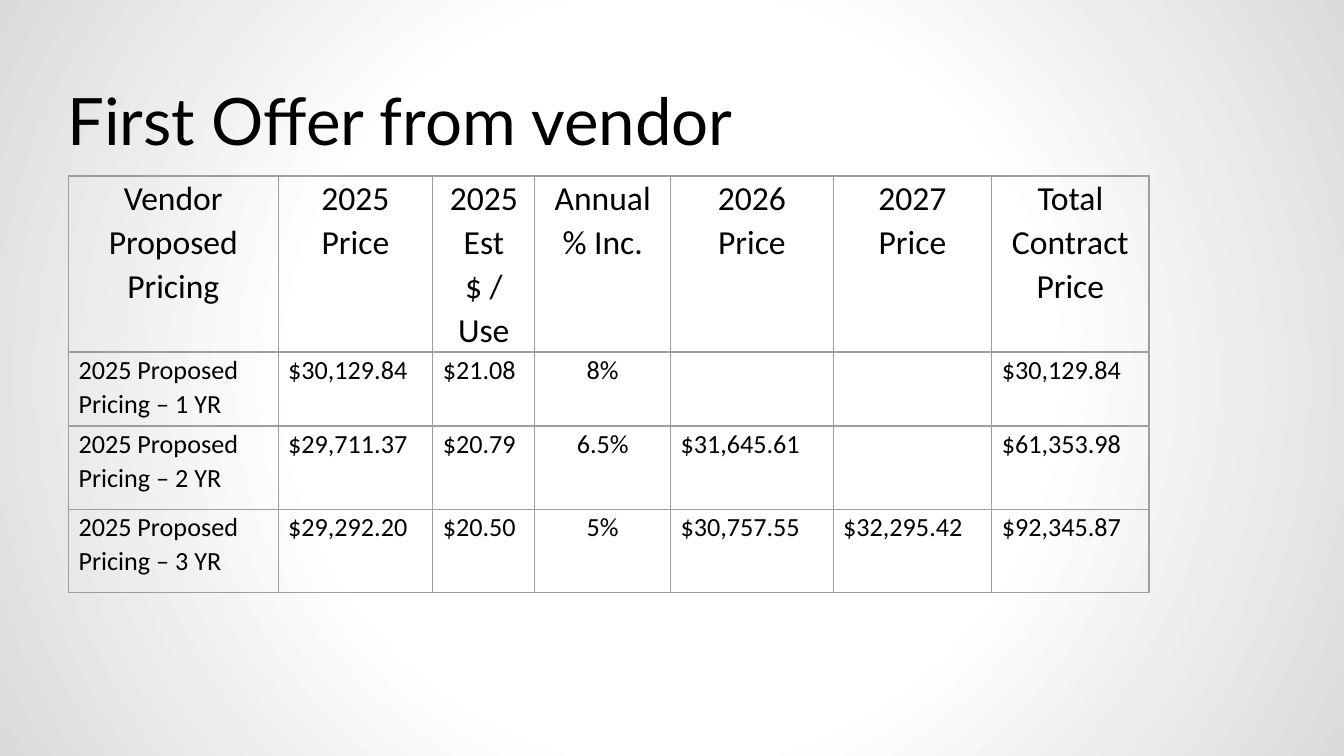
from lxml.etree import SubElement
from pptx import Presentation
from pptx.dml.color import RGBColor
from pptx.enum.text import MSO_ANCHOR as Anchor, MSO_AUTO_SIZE as Fit, PP_ALIGN as Align
from pptx.oxml.ns import qn
from pptx.util import Inches, Pt

HEADS = ["Vendor Proposed Pricing", "2025 Price", "2025 Est $ / Use",
         "Annual % Inc.", "2026 Price", "2027 Price", "Total Contract Price"]
OFFERS = [
    ["2025 Proposed Pricing – 1 YR", "$30,129.84", "$21.08", "8%", "", "", "$30,129.84"],
    ["2025 Proposed Pricing – 2 YR", "$29,711.37", "$20.79", "6.5%", "$31,645.61", "",
     "$61,353.98"],
    ["2025 Proposed Pricing – 3 YR", "$29,292.20", "$20.50", "5%", "$30,757.55",
     "$32,295.42", "$92,345.87"],
]
WIDTHS = [1.56, 1.15, 0.76, 1.01, 1.21, 1.18, 1.17]
HEIGHTS = [1.31, 0.55, 0.62, 0.62]
RATE = HEADS.index("Annual % Inc.")


def color(text):
    return RGBColor.from_string(text)


def assign(obj, values):
    for name, value in values.items():
        setattr(obj, name, value)


def style(par, size, face, align):
    par.alignment = align
    assign(par.font, {"size": Pt(size), "name": face, "bold": False})
    par.font.color.rgb = color("000000")


def add_stop(stops, place, tone):
    stop = SubElement(stops, qn("a:gs"), pos=str(place * 1000))
    SubElement(stop, qn("a:srgbClr"), val=tone)


def paint_back(slide):
    """Radial gradient from a white centre to grey corners."""
    fill = slide.background.fill
    fill.gradient()
    grad = slide.element.find(".//" + qn("a:gradFill"))
    for child in list(grad):
        grad.remove(child)
    stops = SubElement(grad, qn("a:gsLst"))
    for place, tone in [(0, "FFFFFF"), (48, "FFFFFF"), (100, "DBDBDB")]:
        add_stop(stops, place, tone)
    focus = SubElement(grad, qn("a:path"), path="circle")
    SubElement(focus, qn("a:fillToRect"), {side: "50000" for side in "ltrb"})


def set_title(slide, box, text):
    title = slide.shapes.title
    assign(title, dict(zip(("left", "top", "width", "height"), map(Inches, box))))
    frame = title.text_frame
    frame.text = text
    sides = ("left", "top", "right", "bottom")
    assign(frame, {f"margin_{side}": Inches(0.1) for side in sides})
    assign(frame, {"auto_size": Fit.NONE, "word_wrap": True,
                   "vertical_anchor": Anchor.TOP})
    style(frame.paragraphs[0], 35, "Lato", Align.LEFT)


def add_edges(cell, tone, width):
    props = cell._tc.get_or_add_tcPr()
    for side in ("lnL", "lnR", "lnT", "lnB"):
        line = SubElement(props, qn(f"a:{side}"), w=str(Pt(width)))
        fill = SubElement(line, qn("a:solidFill"))
        SubElement(fill, qn("a:srgbClr"), val=tone)


def fill_cell(cell, text, size, align):
    cell.text = text
    assign(cell, {"margin_left": Pt(5.4), "margin_right": Pt(5.4),
                  "margin_top": 0, "margin_bottom": 0})
    par = cell.text_frame.paragraphs[0]
    style(par, size, "Calibri", align)
    par.line_spacing = 1.07
    add_edges(cell, "9E9E9E", 0.75)
    cell.fill.background()


def add_prices(slide, left, top):
    rows = [HEADS] + OFFERS
    box = map(Inches, (left, top, sum(WIDTHS), sum(HEIGHTS)))
    table = slide.shapes.add_table(len(rows), len(HEADS), *box).table
    assign(table, {"first_row": False, "horz_banding": False})
    for col, width in zip(table.columns, WIDTHS):
        col.width = Inches(width)
    for row, height in zip(table.rows, HEIGHTS):
        row.height = Inches(height)
    for r, row in enumerate(rows):
        for c, text in enumerate(row):
            align = Align.CENTER if r == 0 or c == RATE else Align.LEFT
            fill_cell(table.cell(r, c), text, 14 if r else 18, align)


def main():
    deck = Presentation()
    wide = Inches(10)
    assign(deck, {"slide_width": wide, "slide_height": wide * 9 // 16})
    slide = deck.slides.add_slide(deck.slide_layouts.get_by_name("Title Only"))
    paint_back(slide)
    set_title(slide, (0.4, 0.5, 8.43, 0.63), "First Offer from vendor")
    add_prices(slide, 0.51, 1.31)
    deck.save("out.pptx")


if __name__ == "__main__":
    main()
